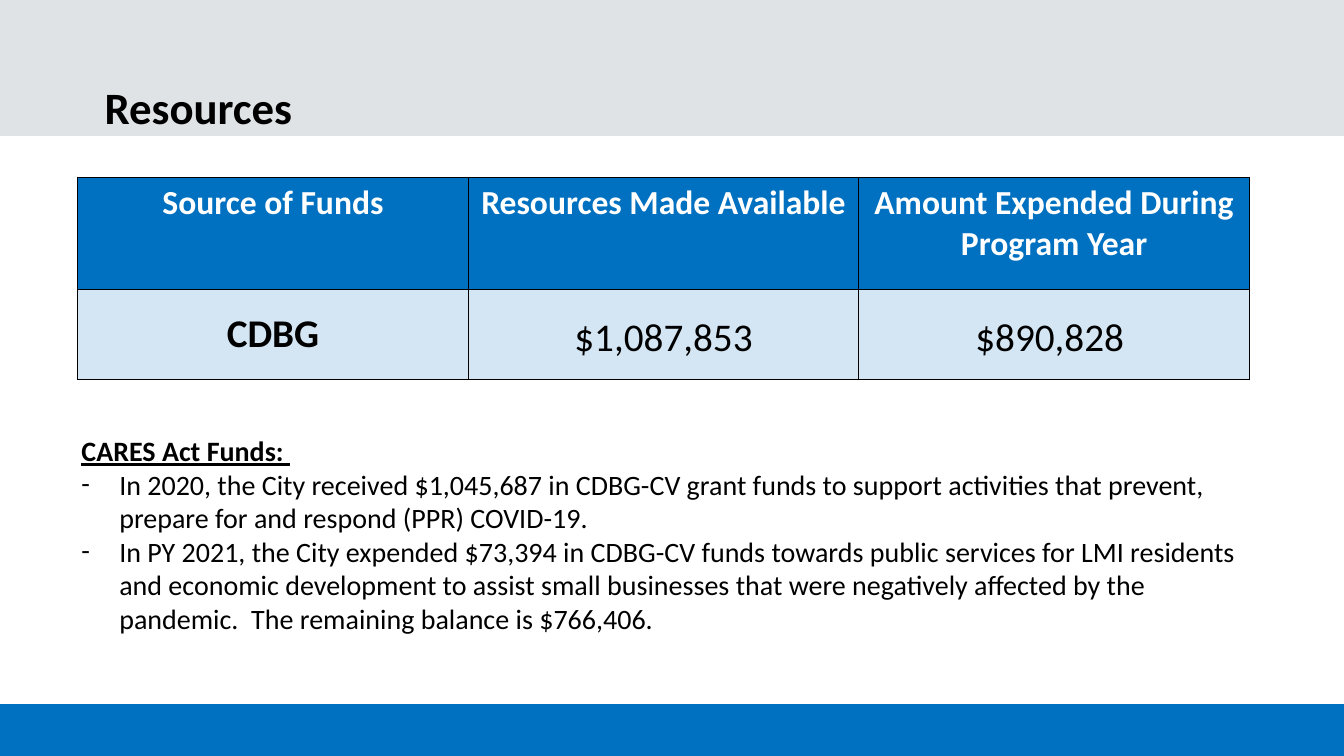
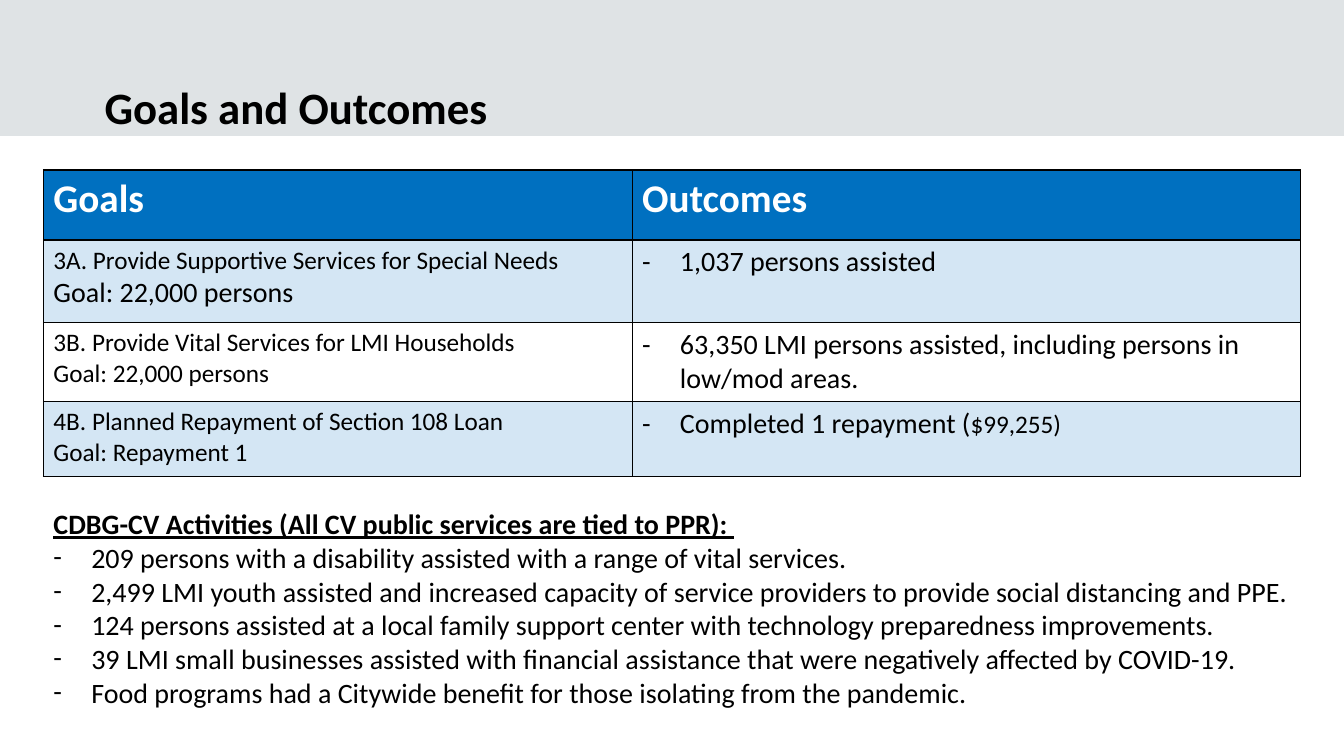
import pptx
import pptx.util
import pptx.dml.color
import pptx.enum.shapes
import pptx.enum.text
import pptx.oxml
import pptx.oxml.ns

Pt = pptx.util.Pt
Align = pptx.enum.text.PP_ALIGN
Anchor = pptx.enum.text.MSO_ANCHOR

COLORS = {
    "band": "DFE3E5",
    "blue": "0070C0",
    "pale": "D4E6F4",
    "white": "FFFFFF",
    "black": "000000",
}
TITLE = {"size": Pt(32), "bold": True}
BODY = {"size": Pt(20), "bold": False}
SMALL = {"size": Pt(18), "bold": False}
LEAD = {"size": Pt(20), "bold": True, "underline": True}
HEAD = {"size": Pt(24), "bold": True}
LARGE = {"size": Pt(28), "bold": True}
SUM = {"size": Pt(28), "bold": False}
CENTER = {"alignment": Align.CENTER}
SUM_PARA = {"alignment": Align.CENTER, "line_spacing": 1.15, "space_after": Pt(10)}
SUM_CELL = {
    "vertical_anchor": Anchor.MIDDLE,
    "margin_left": Pt(5),
    "margin_right": Pt(5),
    "margin_top": 0,
    "margin_bottom": 0,
}


def style(item, values):
    for name, value in values.items():
        setattr(item, name, value)


def rgb(name):
    return pptx.dml.color.RGBColor.from_string(COLORS[name])


def place(shape, left, top, width, height):
    style(shape, {"left": Pt(left), "top": Pt(top),
                  "width": Pt(width), "height": Pt(height)})


def line(*parts, dash=False, **layout):
    return parts, dash, layout


def mark(para, dash):
    props = para._p.get_or_add_pPr()
    indent = Pt(27) if dash else 0
    props.set("marL", str(indent))
    props.set("indent", str(-indent))
    tags = [("a:buFont", "typeface", "Calibri"), ("a:buChar", "char", "-")]
    for tag, key, value in tags if dash else [("a:buNone", None, None)]:
        node = pptx.oxml.ns.qn(tag)
        child = props.makeelement(node, {key: value} if key else {})
        props.append(child)


def write(frame, lines, color="black"):
    for index, (parts, dash, layout) in enumerate(lines):
        para = frame.add_paragraph() if index else frame.paragraphs[0]
        style(para, {"alignment": Align.LEFT, "space_before": Pt(0), **layout})
        mark(para, dash)
        for text, font in parts:
            run = para.add_run()
            run.text = text
            style(run.font, {"name": "Calibri", **font})
            run.font.color.rgb = rgb(color)


def band(slide, color, top, height):
    shape = slide.shapes.add_shape(
        pptx.enum.shapes.MSO_SHAPE.RECTANGLE, 0, Pt(top), Pt(960), Pt(height))
    shape.shadow.inherit = False
    shape.fill.solid()
    shape.fill.fore_color.rgb = rgb(color)
    shape.line.color.rgb = rgb(color)
    shape.line.width = Pt(1)
    return shape


def share(layout, slide):
    place(layout.placeholders[0], 67.5, 57.5, 772.5, 40)
    strip = band(slide, "band", 0, 97)
    layout.shapes._spTree.insert(2, strip._element)


def title(slide, text):
    frame = slide.shapes.title.text_frame
    style(frame, {"vertical_anchor": Anchor.TOP, "word_wrap": True,
                  "auto_size": pptx.enum.text.MSO_AUTO_SIZE.NONE})
    write(frame, [line((text, TITLE), line_spacing=0.9)])


def notes(slide, box, lead, items):
    body = slide.placeholders[1]
    place(body, *box)
    style(body.text_frame, {"auto_size": pptx.enum.text.MSO_AUTO_SIZE.NONE})
    rows = [line((item, BODY), dash=True) for item in items]
    write(body.text_frame, [line((lead, LEAD))] + rows)


def edge(cell):
    props = cell._tc.get_or_add_tcPr()
    space = pptx.oxml.ns.nsdecls("a")
    for index, side in enumerate("LRTB"):
        props.insert(index, pptx.oxml.parse_xml(
            f'<a:ln{side} {space} w="{Pt(1)}"><a:solidFill>'
            f'<a:srgbClr val="{COLORS["black"]}"/></a:solidFill></a:ln{side}>'))


def grid(slide, left, top, widths, heights, cells):
    table = slide.shapes.add_table(
        len(heights), len(widths), Pt(left), Pt(top),
        Pt(sum(widths)), Pt(sum(heights))).table
    for column, width in zip(table.columns, widths):
        column.width = Pt(width)
    for index, height in enumerate(heights):
        table.rows[index].height = Pt(height)
        fill = "blue" if index == 0 else "pale" if index % 2 else "white"
        for spot, lines in enumerate(cells[index]):
            cell = table.cell(index, spot)
            cell.fill.solid()
            cell.fill.fore_color.rgb = rgb(fill)
            edge(cell)
            write(cell.text_frame, lines, "black" if index else "white")
    return table


def funds(slide):
    title(slide, "Resources")
    heads = ["Source of Funds", "Resources Made Available",
             "Amount Expended During Program Year"]
    sums = ["$1,087,853", "$890,828 "]
    table = grid(slide, 55.5, 126.5, [279] * 3, [80.5, 64], [
        [[line((head, HEAD), **CENTER)] for head in heads],
        [[line(("CDBG", LARGE), **CENTER)]]
        + [[line((value, SUM), **SUM_PARA)] for value in sums],
    ])
    table.cell(1, 0).vertical_anchor = Anchor.MIDDLE
    for spot in (1, 2):
        style(table.cell(1, spot), SUM_CELL)
    notes(slide, (51, 306, 842, 153), "CARES Act Funds: ", [
        "In 2020, the City received $1,045,687 in CDBG-CV grant funds to support "
        "activities that prevent, prepare for and respond (PPR) COVID-19.",
        "In PY 2021, the City expended $73,394 in CDBG-CV funds towards public "
        "services for LMI residents and economic development to assist small "
        "businesses that were negatively affected by the pandemic.  The remaining "
        "balance is $766,406.",
    ])
    band(slide, "blue", 503, 37)


def goals(slide):
    title(slide, "Goals and Outcomes")
    rows = [
        ("3A. Provide Supportive Services for Special Needs ",
         ("Goal: 22,000 persons", BODY),
         [("1,037 persons assisted", BODY)]),
        ("3B. Provide Vital Services for LMI Households",
         ("Goal: 22,000 persons", SMALL),
         [("63,350 LMI persons assisted, including persons in low/mod areas.", BODY)]),
        ("4B. Planned Repayment of Section 108 Loan",
         ("Goal: Repayment 1", SMALL),
         [("Completed 1 repayment (", BODY), ("$99,255)", SMALL)]),
    ]
    cells = [[[line((head, LARGE))] for head in ("Goals", "Outcomes")]]
    for name, goal, result in rows:
        cells.append([[line((name, SMALL)), line(goal)],
                      [line(*result, dash=True)]])
    grid(slide, 31, 121.5, [420.5, 477.5], [50, 59, 53.5, 53.5], cells)
    notes(slide, (31, 358.5, 898, 153),
          "CDBG-CV Activities (All CV public services are tied to PPR): ", [
              "209 persons with a disability assisted with a range of vital services.",
              "2,499 LMI youth assisted and increased capacity of service providers "
              "to provide social distancing and PPE.",
              "124 persons assisted at a local family support center with technology "
              "preparedness improvements.",
              "39 LMI small businesses assisted with financial assistance that were "
              "negatively affected by COVID-19.",
              "Food programs had a Citywide benefit for those isolating from the "
              "pandemic.",
          ])


def main():
    deck = pptx.Presentation()
    style(deck, {"slide_width": Pt(960), "slide_height": Pt(540)})
    layout = deck.slide_layouts[1]
    first, second = [deck.slides.add_slide(layout) for _ in range(2)]
    share(layout, first)
    funds(first)
    goals(second)
    deck.save("out.pptx")


if __name__ == "__main__":
    main()
